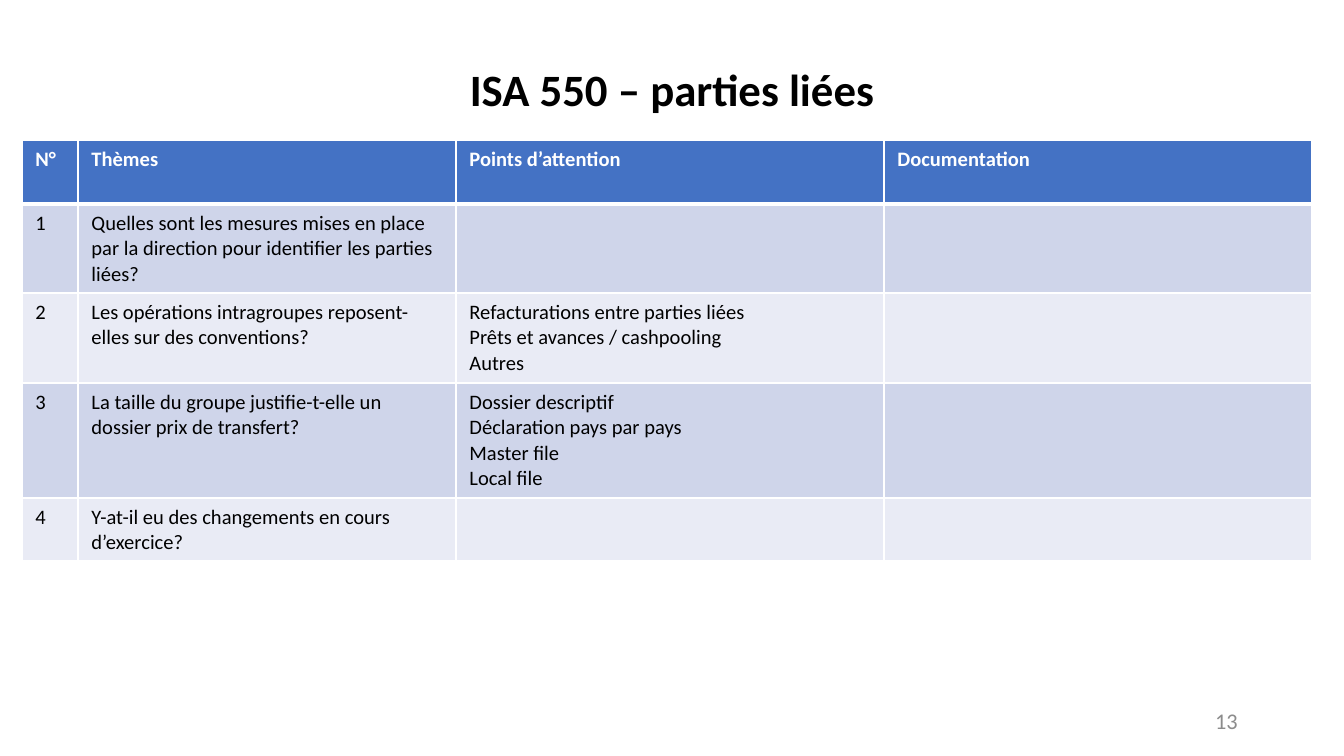
from lxml.etree import SubElement
from pptx import Presentation
from pptx.dml.color import RGBColor
from pptx.enum.text import MSO_ANCHOR, PP_ALIGN
from pptx.oxml.ns import qn
from pptx.util import Emu, Pt

EMU_PER_PX = 914400 / 134.4
COLORS = {
    "header": "4472C4",
    "odd_row": "CFD5EA",
    "even_row": "E9EBF5",
    "white": "FFFFFF",
    "black": "000000",
    "page_number": "8C8C8C",
}
COLUMN_WIDTHS = [56, 378, 428, 428]
ROW_HEIGHTS = [64, 89, 90, 115, 63]
QUESTIONS = [
    ["N°", "Thèmes", "Points d’attention", "Documentation"],
    ["1", "Quelles sont les mesures mises en place par la direction pour "
          "identifier les parties liées?", "", ""],
    ["2", "Les opérations intragroupes reposent-elles sur des conventions?",
     "Refacturations entre parties liées\nPrêts et avances / cashpooling\nAutres", ""],
    ["3", "La taille du groupe justifie-t-elle un dossier prix de transfert?",
     "Dossier descriptif\nDéclaration pays par pays\nMaster file\nLocal file", ""],
    ["4", "Y-at-il eu des changements en cours d’exercice?", "", ""],
]


def px(length):
    return Emu(round(length * EMU_PER_PX))


def color(name):
    return RGBColor.from_string(COLORS[name])


def write(frame, text, color_name, paragraph_format=None, **font_format):
    frame.text = text
    for paragraph in frame.paragraphs:
        for name, value in (paragraph_format or {}).items():
            setattr(paragraph, name, value)
        font = paragraph.font
        for run in paragraph.runs:
            font = run.font
        for name, value in {"name": "Calibri", **font_format}.items():
            setattr(font, name, value)
        font.color.rgb = color(color_name)


def add_title(slide, left, top, width, height):
    title = slide.shapes.title
    box = {"left": left, "top": top, "width": width, "height": height}
    for name, value in box.items():
        setattr(title, name, px(value))
    title.text_frame.vertical_anchor = MSO_ANCHOR.MIDDLE
    write(title.text_frame, "ISA 550 – parties liées", "black",
          {"alignment": PP_ALIGN.CENTER, "line_spacing": 0.9},
          size=Pt(24), bold=True)


def set_borders(cell, widths):
    """Draw white borders; widths are points for left, right, top, bottom."""
    properties = cell._tc.get_or_add_tcPr()
    for side, width in zip("LRTB", widths):
        line = SubElement(properties, qn(f"a:ln{side}"), w=str(Pt(width)))
        fill = SubElement(line, qn("a:solidFill"))
        SubElement(fill, qn("a:srgbClr"), val=COLORS["white"])


def add_questions(slide, left, top):
    table = slide.shapes.add_table(
        len(ROW_HEIGHTS), len(COLUMN_WIDTHS), px(left), px(top),
        px(sum(COLUMN_WIDTHS)), px(sum(ROW_HEIGHTS))).table
    for column, width in zip(table.columns, COLUMN_WIDTHS):
        column.width = px(width)
    for index, (row, height, texts) in enumerate(
            zip(table.rows, ROW_HEIGHTS, QUESTIONS)):
        row.height = px(height)
        is_header = index == 0
        band = "header" if is_header else "odd_row" if index % 2 else "even_row"
        for cell, text in zip(row.cells, texts):
            set_borders(cell, [1, 1, 3 if index == 1 else 1, 3 if is_header else 1])
            cell.fill.solid()
            cell.fill.fore_color.rgb = color(band)
            write(cell.text_frame, text, "white" if is_header else "black",
                  size=Pt(11), bold=is_header)


def add_page_number(slide, left, top, width, height):
    frame = slide.shapes.add_textbox(
        px(left), px(top), px(width), px(height)).text_frame
    frame.word_wrap = True
    frame.vertical_anchor = MSO_ANCHOR.MIDDLE
    write(frame, "13", "page_number", {"alignment": PP_ALIGN.RIGHT}, size=Pt(12))


def main():
    presentation = Presentation()
    presentation.slide_width = px(1344)
    presentation.slide_height = px(756)
    slide = presentation.slides.add_slide(presentation.slide_layouts[5])
    add_page_number(slide, 949, 701, 302, 40)
    add_questions(slide, 22, 140)
    add_title(slide, 93, 19, 1158, 146)
    presentation.save("out.pptx")


if __name__ == "__main__":
    main()
